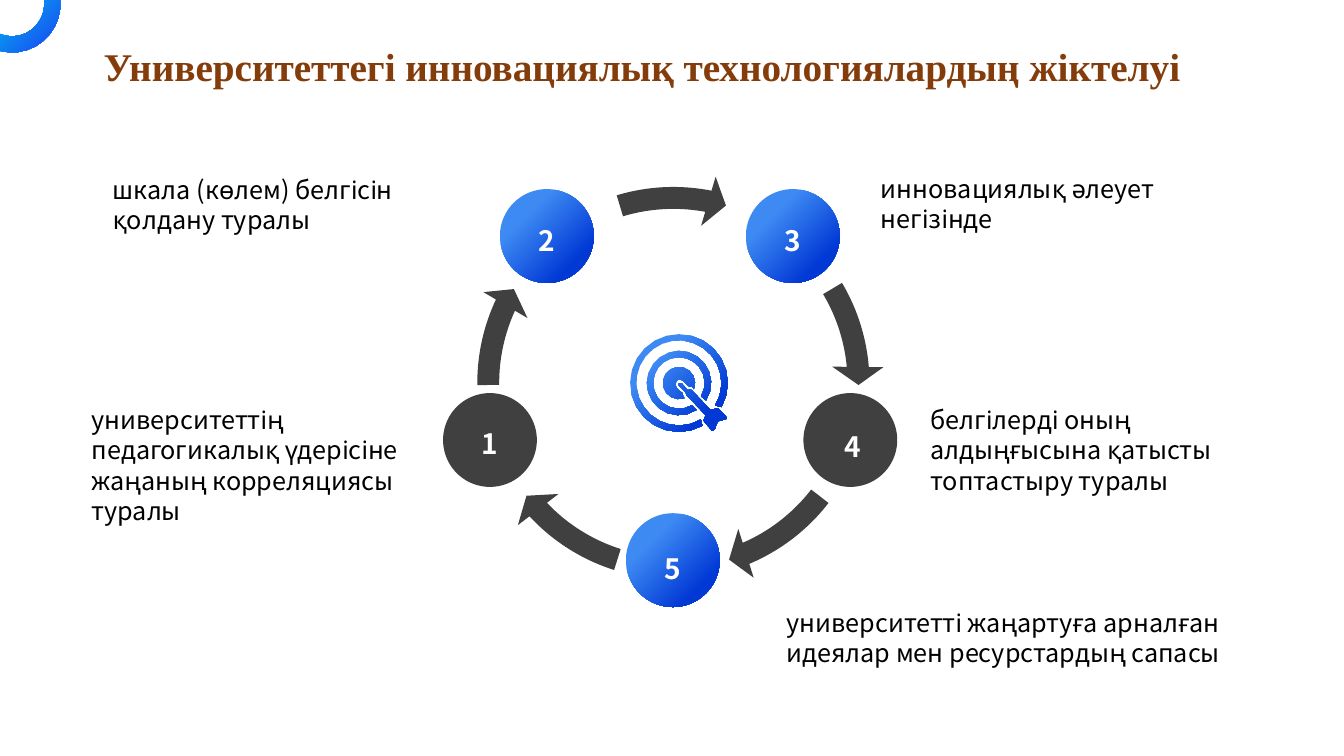
from math import ceil, cos, radians, sin

from pptx import Presentation
from pptx.dml.color import RGBColor
from pptx.enum.shapes import MSO_SHAPE
from pptx.enum.text import MSO_AUTO_SIZE as AutoSize, PP_ALIGN as Align
from pptx.util import Pt

COLORS = {
    "title": "843C0B", "body": "000000", "number": "FFFFFF", "dark": "404040",
    "blue_light": "3D8AF3", "blue_deep": "0239D5",
    "corner_light": "00B0F0", "corner_deep": "1C46F2",
}
BLUE = (("blue_light", 0.28), ("blue_deep", 0.79))
CORNER = (("corner_light", 0.04), ("corner_deep", 0.95))

SANS = "Noto Sans CJK SC"
TITLE = {"name": "Times New Roman", "size": Pt(28), "bold": True}
BODY = {"name": SANS, "size": Pt(18)}
NUMBER = {"name": SANS, "size": Pt(20), "bold": True}

# number, centre offset from the cycle centre, label nudge, fill
NODES = [
    ("2", -90.4, -105, 0, -1.6, BLUE),
    ("3", 85.3, -105, 0, -1.6, BLUE),
    ("4", 126.4, 40.7, 1.4, -0.6, "dark"),
    ("1", -131, 40.7, 0, -2.5, "dark"),
    ("5", -0.4, 126.5, 0, 1, BLUE),
]
# start and tip angles, clockwise from the right
ARROWS = [(-30.7, 0.6), (37.7, 72.5), (107.6, 142.5), (179.4, 210.5), (253.2, 286.5)]

# offsets from the target centre
DART = [
    (1.8, 0), (6.1, 5), (9, 5), (22.7, 19.4), (27, 18), (27.7, 18), (33.5, 23.8),
    (34.2, 25.2), (33.5, 25.9), (27.7, 27.4), (25.6, 33.1), (24.8, 33.8), (23.4, 33.8),
    (18.4, 28.1), (17.6, 26.6), (19.1, 23), (5.4, 8.6), (4.7, 6.5), (-0.4, 1.4), (-0.4, 0),
]
DART_NOTCH = [
    (9.7, 2.9), (6.8, 2.2), (3.2, -1.4), (0.4, -2.9), (-1.8, -1.4),
    (-2.5, 0.7), (-1.8, 3.6), (2.5, 7.2), (3.2, 10.1),
]

CAPTIONS = [
    ("университеттің педагогикалық үдерісіне жаңаның корреляциясы туралы",
     (58.4, 285.4, 235.4, 94.3)),
    ("инновациялық әлеует негізінде", (622.1, 120.2, 251.3, 51.1)),
    ("белгілерді оның алдыңғысына қатысты топтастыру туралы",
     (657.4, 285.4, 264.2, 72.7)),
    ("университетті жаңартуға арналған идеялар мен ресурстардың сапасы",
     (554.8, 430.1, 351.4, 51.1)),
    ("шкала (көлем) белгісін қолдану туралы", (73.6, 121, 277.9, 51.1)),
]


def rgb(name):
    return RGBColor.from_string(COLORS[name])


def paint(shape, fill):
    """Fill with a colour name, or with a diagonal gradient of (name, position) stops."""
    shape.shadow.inherit = False
    shape.line.fill.background()
    if isinstance(fill, str):
        shape.fill.solid()
        shape.fill.fore_color.rgb = rgb(fill)
        return
    shape.fill.gradient()
    shape.fill.gradient_angle = 315
    for stop, (name, position) in zip(shape.fill.gradient_stops, fill):
        stop.color.rgb = rgb(name)
        stop.position = position


def arc(radius, start, end, step=15):
    """Points along a circle, about one per step degrees."""
    count = ceil(abs(end - start) / step)
    angles = [radians(start + (end - start) * i / count) for i in range(count + 1)]
    return [(radius * cos(angle), radius * sin(angle)) for angle in angles]


def add_outline(shapes, center, contours, fill):
    """Draw closed contours, given as offsets from center, as one freeform."""
    builder = None
    for contour in contours:
        points = [(Pt(center[0] + x), Pt(center[1] + y)) for x, y in contour]
        if builder is None:
            builder = shapes.build_freeform(*points[0], scale=1.0)
        else:
            builder.move_to(*points[0])
        builder.add_line_segments(points[1:], close=True)
    paint(builder.convert_to_shape(), fill)


def add_text(shapes, box, text, font, color, wrap=True, **paragraph_format):
    text_box = shapes.add_textbox(*map(Pt, box))
    frame = text_box.text_frame
    frame.word_wrap = wrap
    frame.auto_size = AutoSize.SHAPE_TO_FIT_TEXT
    paragraph = frame.paragraphs[0]
    for key, value in paragraph_format.items():
        setattr(paragraph, key, value)
    run = paragraph.add_run()
    run.text = text
    for key, value in font.items():
        setattr(run.font, key, value)
    run.font.color.rgb = rgb(color)


def add_corner_ring(shapes, box):
    """Draw the part of a ring that the slide's corner leaves visible."""
    left, top, width, height = box
    center = (left + 0.2 * width, top + 0.08 * height)
    ring = arc(34.5, -4.8, 104.6, 11) + arc(23, 112.1, -7.2, 12)
    add_outline(shapes, center, [ring], CORNER)


def add_arrow(shapes, box, start, tip):
    """Add a circular arrow; its adjustments count 0.6 per degree."""
    head_angle = 5.6
    arrow = shapes.add_shape(MSO_SHAPE.CIRCULAR_ARROW, *map(Pt, box))
    values = (0.052, head_angle * 0.6, (tip - head_angle) % 360 * 0.6,
              start % 360 * 0.6, 0.0607)
    for index, value in enumerate(values):
        arrow.adjustments[index] = value
    paint(arrow, "dark")


def add_target(shapes, box):
    left, top, width, height = box
    center = (left + width / 2, top + height / 2)
    contours = [
        DART,
        arc(11.5, 70, 382, 24) + DART_NOTCH,
        arc(23, 57, 392.7, 18) + arc(18.4, 391, 60, 18),
        arc(34.9, 61.3, 389.5) + arc(30.4, 391.8, 59.2),
    ]
    add_outline(shapes, center, contours, BLUE)


def add_cycle(slide, box):
    """Draw the arrows, the numbered nodes and the target around the box's centre."""
    left, top, width, height = box
    center_x, center_y = left + width / 2, top + height / 2
    shapes = slide.shapes.add_group_shape().shapes
    for start, tip in ARROWS:
        add_arrow(shapes, box, start, tip)
    add_target(shapes, (center_x - 31, center_y - 35, 70, 70))

    diameter, label_width, label_height = 67, 26.6, 36
    for number, dx, dy, nudge_x, nudge_y, fill in NODES:
        x, y = center_x + dx, center_y + dy
        node_box = (x - diameter / 2, y - diameter / 2, diameter, diameter)
        paint(shapes.add_shape(MSO_SHAPE.OVAL, *map(Pt, node_box)), fill)
        label_box = (x + nudge_x - label_width / 2, y + nudge_y - label_height / 2,
                     label_width, label_height)
        add_text(shapes, label_box, number, NUMBER, "number", wrap=False,
                 alignment=Align.CENTER, line_spacing=1.3)


def main():
    presentation = Presentation()
    presentation.slide_width, presentation.slide_height = Pt(960), Pt(540)
    slide = presentation.slides.add_slide(presentation.slide_layouts[6])
    add_corner_ring(slide.shapes, (0, 0, 43.2, 37.4))
    add_cycle(slide, (330.5, 123.1, 301, 301))
    for text, box in CAPTIONS:
        add_text(slide.shapes, box, text, BODY, "body")
    add_text(slide.shapes, (67, 26.6, 791.3, 41),
             "Университеттегі инновациялық технологиялардың жіктелуі",
             TITLE, "title", wrap=False)
    presentation.save("out.pptx")


if __name__ == "__main__":
    main()
